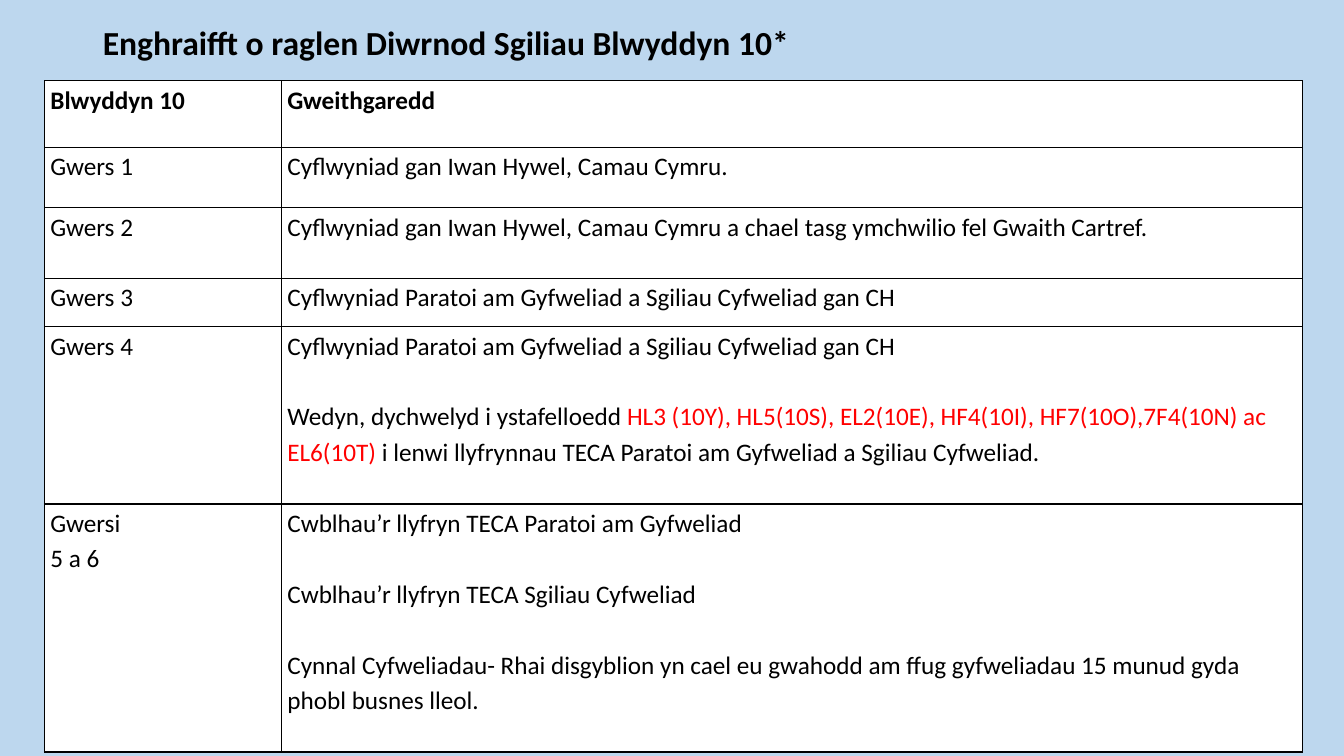
"""Build the Year 10 skills day programme slide."""
import dataclasses

import pptx
import pptx.dml.color
import pptx.enum.text
import pptx.oxml
import pptx.oxml.ns
import pptx.util


@dataclasses.dataclass(frozen=True)
class Theme:
    font: str = "Calibri"
    background: str = "BDD7EE"
    cell: str = "FFFFFF"
    ink: str = "000000"
    accent: str = "FF0000"
    title_size: int = 24
    body_size: int = 18
    line_spacing: float = 1.15
    paragraph_gap: float = 25.25
    border: int = 1


THEME = Theme()
WIDTH, HEIGHT = 13.33, 7.5
TITLE_BOX = (0.92, 0.17, 7.09, 0.5)
TABLE_LEFT, TABLE_TOP = 0.44, 0.8
COLUMNS = (2.35, 10.13)
ROWS = (0.66, 0.6, 0.7, 0.48, 1.76, 2.46)
CELL_FORMAT = {
    "margin_left": pptx.util.Inches(0.06),
    "margin_right": pptx.util.Inches(0.06),
    "margin_top": 0,
    "margin_bottom": 0,
}
TITLE_FORMAT = {
    "word_wrap": False,
    "vertical_anchor": pptx.enum.text.MSO_ANCHOR.MIDDLE,
    "auto_size": pptx.enum.text.MSO_AUTO_SIZE.SHAPE_TO_FIT_TEXT,
}
TITLE = "Enghraifft o raglen Diwrnod Sgiliau Blwyddyn 10*"
INTERVIEW_TALK = "Cyflwyniad Paratoi am Gyfweliad a Sgiliau Cyfweliad gan CH"
ROOMS = "HL3 (10Y), HL5(10S), EL2(10E), HF4(10I), HF7(10O),7F4(10N) ac EL6(10T) "
PROGRAMME = (
    (["Blwyddyn 10"], ["Gweithgaredd"]),
    (["Gwers 1"], ["Cyflwyniad gan Iwan Hywel, Camau Cymru."]),
    (["Gwers 2"], ["Cyflwyniad gan Iwan Hywel, Camau Cymru a chael tasg "
                   "ymchwilio fel Gwaith Cartref."]),
    (["Gwers 3"], [INTERVIEW_TALK]),
    (["Gwers 4"], [
        INTERVIEW_TALK,
        (("Wedyn, dychwelyd i ystafelloedd ", THEME.ink),
         (ROOMS, THEME.accent),
         ("i lenwi llyfrynnau TECA Paratoi am Gyfweliad a Sgiliau Cyfweliad.",
          THEME.ink)),
    ]),
    (["Gwersi", "5 a 6"], [
        "Cwblhau’r llyfryn TECA Paratoi am Gyfweliad",
        "Cwblhau’r llyfryn TECA Sgiliau Cyfweliad",
        "Cynnal Cyfweliadau- Rhai disgyblion yn cael eu gwahodd am ffug "
        "gyfweliadau 15 munud gyda phobl busnes lleol.",
    ]),
)


def color(value):
    """Turn a hex string into a colour."""
    return pptx.dml.color.RGBColor.from_string(value)


def apply_format(target, values):
    """Set each named attribute on the target."""
    for name, value in values.items():
        setattr(target, name, value)


def add_run(paragraph, text, size, ink, bold):
    """Add one formatted run to a paragraph."""
    run = paragraph.add_run()
    run.text = text
    apply_format(run.font, {"name": THEME.font, "bold": bold,
                            "size": pptx.util.Pt(size)})
    run.font.color.rgb = color(ink)


def add_title(slide):
    """Place and format the title placeholder."""
    shape = slide.shapes.title
    box = map(pptx.util.Inches, TITLE_BOX)
    apply_format(shape, dict(zip(("left", "top", "width", "height"), box)))
    apply_format(shape.text_frame, TITLE_FORMAT)
    paragraph = shape.text_frame.paragraphs[0]
    paragraph.alignment = pptx.enum.text.PP_ALIGN.LEFT
    add_run(paragraph, TITLE, THEME.title_size, THEME.ink, True)


def add_borders(cell):
    """Draw a line on all four sides of a cell."""
    properties = cell._tc.get_or_add_tcPr()
    for side in "LRTB":
        properties.append(pptx.oxml.parse_xml(
            f'<a:ln{side} {pptx.oxml.ns.nsdecls("a")} '
            f'w="{pptx.util.Pt(THEME.border)}"><a:solidFill>'
            f'<a:srgbClr val="{THEME.ink}"/></a:solidFill></a:ln{side}>'))


def fill_cell(cell, paragraphs, bold, gap):
    """Style a cell and write its paragraphs, spaced by the gap."""
    apply_format(cell, CELL_FORMAT)
    add_borders(cell)
    cell.fill.solid()
    cell.fill.fore_color.rgb = color(THEME.cell)
    for index, content in enumerate(paragraphs):
        frame = cell.text_frame
        paragraph = frame.add_paragraph() if index else frame.paragraphs[0]
        apply_format(paragraph, {
            "line_spacing": THEME.line_spacing,
            "space_before": pptx.util.Pt(gap if index else 0),
        })
        runs = ((content, THEME.ink),) if isinstance(content, str) else content
        for text, ink in runs:
            add_run(paragraph, text, THEME.body_size, ink, bold)


def add_programme(slide):
    """Add the table of lessons and activities."""
    box = (TABLE_LEFT, TABLE_TOP, sum(COLUMNS), sum(ROWS))
    table = slide.shapes.add_table(
        len(ROWS), len(COLUMNS), *map(pptx.util.Inches, box)).table
    apply_format(table, {"first_row": True, "horz_banding": False})
    for column, width in zip(table.columns, COLUMNS):
        column.width = pptx.util.Inches(width)
    for index, (row, height) in enumerate(zip(table.rows, ROWS)):
        row.height = pptx.util.Inches(height)
        lesson, activity = PROGRAMME[index]
        fill_cell(row.cells[0], lesson, index == 0, 0)
        fill_cell(row.cells[1], activity, index == 0, THEME.paragraph_gap)


def main():
    """Build and save the presentation."""
    presentation = pptx.Presentation()
    apply_format(presentation, {"slide_width": pptx.util.Inches(WIDTH),
                                "slide_height": pptx.util.Inches(HEIGHT)})
    slide = presentation.slides.add_slide(presentation.slide_layouts[5])
    slide.background.fill.solid()
    slide.background.fill.fore_color.rgb = color(THEME.background)
    add_programme(slide)
    add_title(slide)
    presentation.save("out.pptx")


if __name__ == "__main__":
    main()
